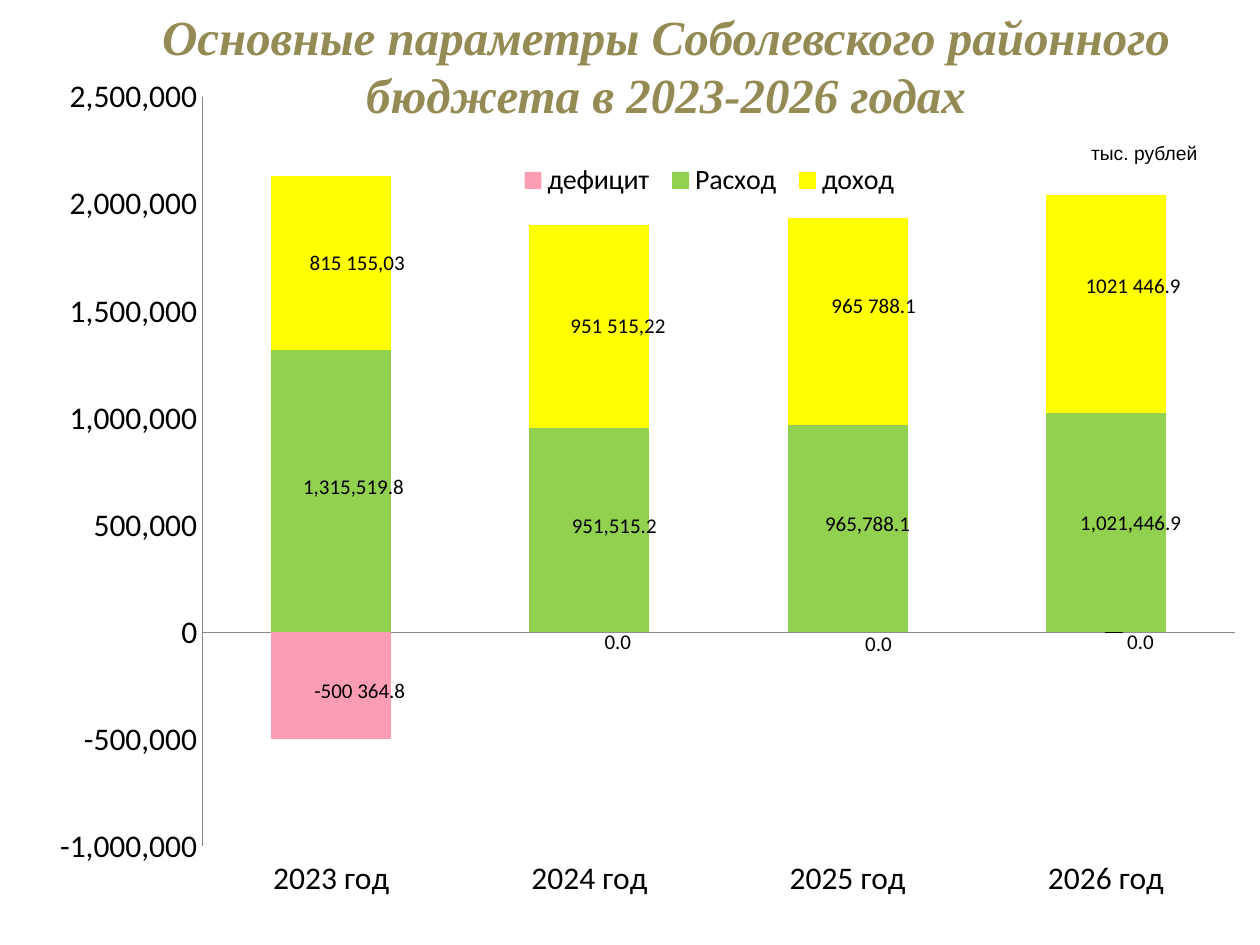
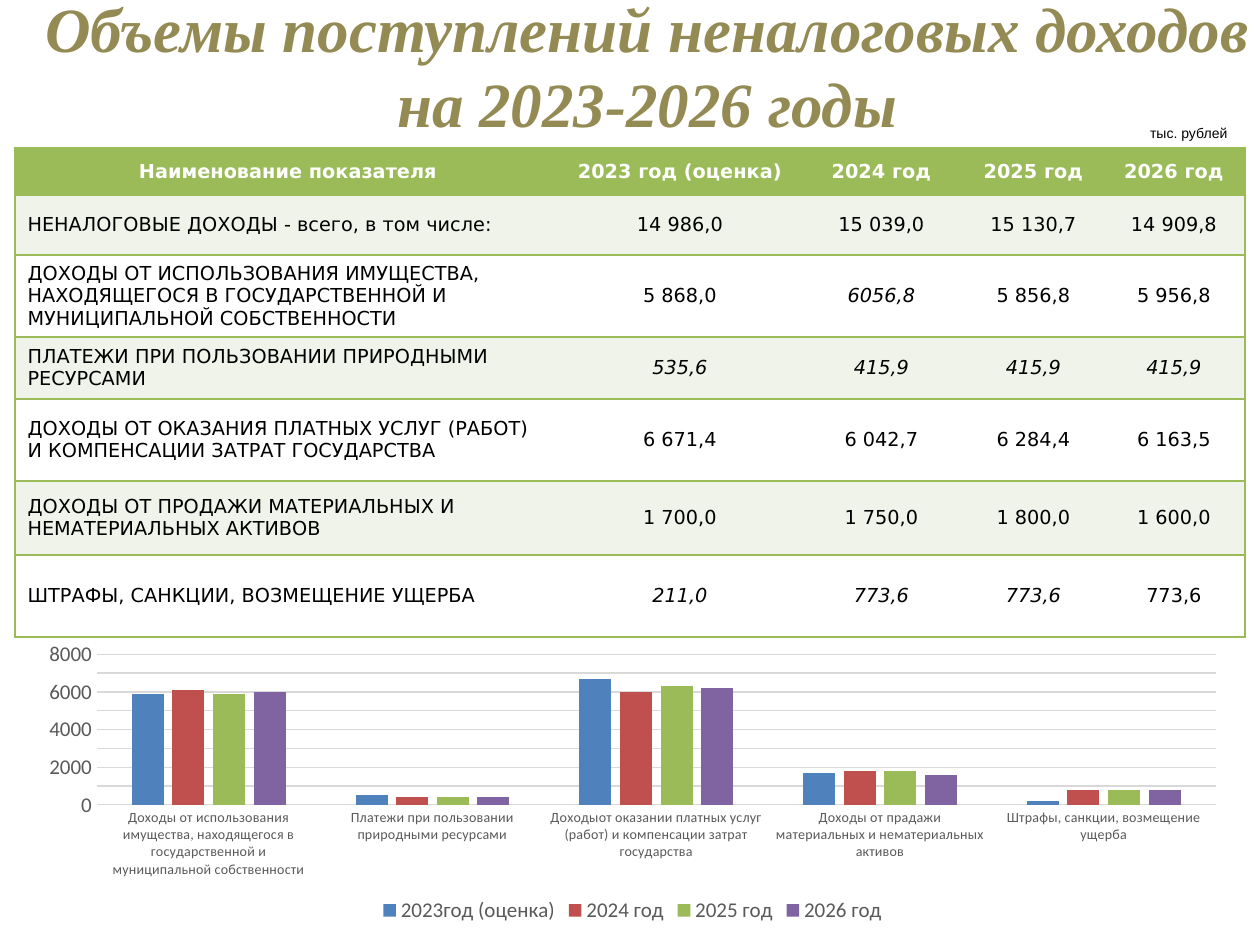
from copy import deepcopy
from dataclasses import dataclass

from lxml.etree import SubElement
from pptx import Presentation
from pptx.chart.data import CategoryChartData
from pptx.dml.color import RGBColor as RGB
from pptx.enum.chart import XL_CHART_TYPE as CT
from pptx.enum.chart import XL_LABEL_POSITION as LabelPos
from pptx.enum.chart import XL_LEGEND_POSITION as LegendPos
from pptx.enum.chart import XL_TICK_LABEL_POSITION as TickPos
from pptx.enum.chart import XL_TICK_MARK as Tick
from pptx.enum.text import MSO_ANCHOR as Anchor
from pptx.enum.text import MSO_AUTO_SIZE as AutoSize
from pptx.enum.text import PP_ALIGN as Align
from pptx.oxml import parse_xml
from pptx.oxml.ns import nsdecls, qn
from pptx.util import Pt


@dataclass(frozen=True)
class Theme:
    title: str = "948A54"
    text: str = "000000"
    white: str = "FFFFFF"
    green: str = "9BBB59"
    band: str = "EFF3EA"
    grey: str = "595959"
    grid: str = "D9D9D9"
    axis: str = "868686"
    budget: tuple = ("FD9DB4", "92D050", "FFFF00")
    years: tuple = ("4F81BD", "C0504D", "9BBB59", "8064A2")
    title_font: str = "Times New Roman"
    note_font: str = "Arial"
    table_font: str = "DejaVu Sans"
    chart_font: str = "Calibri"
    table_size: int = 11
    label_size: int = 12
    axis_size: int = 18
    legend_size: int = 16
    small_axis_size: int = 12
    category_size: int = 8


T = Theme()
TITLE_INDENT = 98

BUDGET_CHART = (15, 66, 1240, 880)
BUDGET_YEARS = ("2023 год", "2024 год", "2025 год", "2026 год")
BUDGET = (
    ("дефицит", (-500364.8, 0, 0, 0), r"#\ ##0.0", {},
     ((28, 5), (26, 10), (29, 12), (32, 10))),
    ("Расход", (1315519.8, 951515.2, 965788.1, 1021446.9), "#,##0.0", {},
     ((22, -4), (25, -4), (20, -4), (25, 0))),
    ("доход", (815155, 951515.2, 965788.1, 1021446.9), r"#\ ##0.0",
     {0: "815 155,03", 1: "951 515,22"},
     ((26, 0), (29, 0), (26, -16), (27, -18))),
)

COLUMNS = (546, 238, 165, 139, 142)
HEADER = ("Наименование показателя", "2023 год (оценка)",
          "2024 год", "2025 год", "2026 год")
ROWS = (
    (47, HEADER, ()),
    (60, ("НЕНАЛОГОВЫЕ ДОХОДЫ - всего, в том числе:",
          "14 986,0", "15 039,0", "15 130,7", "14 909,8"), ()),
    (82, ("ДОХОДЫ ОТ ИСПОЛЬЗОВАНИЯ ИМУЩЕСТВА, НАХОДЯЩЕГОСЯ В "
          "ГОСУДАРСТВЕННОЙ И МУНИЦИПАЛЬНОЙ СОБСТВЕННОСТИ",
          "5 868,0", "6056,8", "5 856,8", "5 956,8"), (2,)),
    (62, ("ПЛАТЕЖИ ПРИ ПОЛЬЗОВАНИИ ПРИРОДНЫМИ РЕСУРСАМИ",
          "535,6", "415,9", "415,9", "415,9"), (1, 2, 3, 4)),
    (82, ("ДОХОДЫ ОТ ОКАЗАНИЯ ПЛАТНЫХ УСЛУГ (РАБОТ) И КОМПЕНСАЦИИ "
          "ЗАТРАТ ГОСУДАРСТВА",
          "6 671,4", "6 042,7", "6 284,4", "6 163,5"), ()),
    (74, ("ДОХОДЫ ОТ ПРОДАЖИ МАТЕРИАЛЬНЫХ И НЕМАТЕРИАЛЬНЫХ АКТИВОВ",
          "1 700,0", "1 750,0", "1 800,0", "1 600,0"), ()),
    (82, ("ШТРАФЫ, САНКЦИИ, ВОЗМЕЩЕНИЕ УЩЕРБА",
          "211,0", "773,6", "773,6", "773,6"), (1, 2, 3)),
)

INCOME_KINDS = (
    "Доходы от использования имущества, находящегося в государственной "
    "и муниципальной собственности",
    "Платежи при пользовании природными ресурсами",
    "Доходыот оказании платных услуг (работ) и компенсации затрат государства",
    "Доходы от прадажи материальных и нематериальных активов",
    "Штрафы, санкции, возмещение ущерба",
)
INCOME = (
    ("2023год (оценка)", (5900, 500, 6700, 1700, 200)),
    ("2024 год", (6100, 400, 6000, 1800, 800)),
    ("2025 год", (5900, 400, 6300, 1800, 800)),
    ("2026 год", (6000, 400, 6200, 1600, 800)),
)


def px(n):
    return round(n * 914400 / 126)


def style(font, size, name, color, bold=False, italic=False):
    font.size, font.name = Pt(size), name
    font.bold, font.italic = bold, italic
    font.color.rgb = RGB.from_string(color)


def add_title(s, box, text, size):
    tf = s.shapes.add_textbox(*map(px, box)).text_frame
    tf.word_wrap = True
    tf.vertical_anchor = Anchor.MIDDLE
    p = tf.paragraphs[0]
    p.text = text
    p.alignment = Align.CENTER
    pPr = p._p.get_or_add_pPr()
    pPr.set("marL", str(px(TITLE_INDENT)))
    pPr.set("indent", "0")
    style(p.runs[0].font, size, T.title_font, T.title, True, True)


def add_unit_note(s, box, size):
    tf = s.shapes.add_textbox(*map(px, box)).text_frame
    tf.word_wrap = False
    tf.auto_size = AutoSize.SHAPE_TO_FIT_TEXT
    p = tf.paragraphs[0]
    p.text = "тыс. рублей"
    p.alignment = Align.RIGHT
    style(p.runs[0].font, size, T.note_font, T.text)


def set_borders(cell, shown):
    tcPr = cell._tc.get_or_add_tcPr()
    for side in "LRTB":
        ln = SubElement(tcPr, qn(f"a:ln{side}"), w=str(Pt(1)))
        if side in shown:
            fill = SubElement(ln, qn("a:solidFill"))
            SubElement(fill, qn("a:srgbClr"), val=T.green)
        else:
            SubElement(ln, qn("a:noFill"))


def fill_cell(cell, row, col, text, italic):
    head = row == 0
    last = len(COLUMNS) - 1
    set_borders(cell, "TB" + {0: "L", last: "R"}.get(col, ""))
    color = T.green if head else T.band if row % 2 else T.white
    cell.fill.solid()
    cell.fill.fore_color.rgb = RGB.from_string(color)
    cell.vertical_anchor = Anchor.MIDDLE
    p = cell.text_frame.paragraphs[0]
    p.text = text
    p.alignment = Align.CENTER if head or col else Align.LEFT
    style(p.runs[0].font, T.table_size, T.table_font,
          T.white if head else T.text, head, italic)


def add_income_table(s):
    box = (15, 148, sum(COLUMNS), sum(row[0] for row in ROWS))
    table = s.shapes.add_table(len(ROWS), len(COLUMNS), *map(px, box)).table
    table.first_row = table.horz_banding = False
    for column, width in zip(table.columns, COLUMNS):
        column.width = px(width)
    for i, (height, texts, italics) in enumerate(ROWS):
        table.rows[i].height = px(height)
        for j, text in enumerate(texts):
            fill_cell(table.cell(i, j), i, j, text, j in italics)


def line_color(line, color, width=0.75):
    line.color.rgb = RGB.from_string(color)
    line.width = Pt(width)


def add_column_chart(s, kind, box, cats, series, colors, gap, overlap):
    data = CategoryChartData()
    data.categories = cats
    for name, values in series:
        data.add_series(name, values)
    chart = s.shapes.add_chart(kind, *map(px, box), data).chart
    chart.has_title = False
    chart.font.name = T.chart_font
    plot = chart.plots[0]
    plot.vary_by_categories = False
    plot.gap_width, plot.overlap = gap, overlap
    for ser, color in zip(plot.series, colors):
        ser.invert_if_negative = False
        ser.format.fill.solid()
        ser.format.fill.fore_color.rgb = RGB.from_string(color)
    for axis in (chart.category_axis, chart.value_axis):
        axis.major_tick_mark = axis.minor_tick_mark = Tick.NONE
    chart.has_legend = True
    chart.legend.position = LegendPos.BOTTOM
    chart.legend.include_in_layout = False
    return chart


def layout_xml(**values):
    items = "".join(f'<c:{k} val="{v}"/>' for k, v in values.items())
    return parse_xml(f'<c:layout {nsdecls("c")}><c:manualLayout>{items}'
                     "</c:manualLayout></c:layout>")


def place_part(chart, tag, after, **values):
    part = chart.element.xpath(f".//c:{tag}")[0]
    for old in part.findall(qn("c:layout")):
        part.remove(old)
    part.insert(after, layout_xml(**values))


def add_point_labels(ser, fmt, custom, offsets):
    labels = ser.data_labels
    labels.show_value = True
    labels.number_format, labels.number_format_is_linked = fmt, False
    style(labels.font, T.label_size, T.chart_font, T.text)
    for i, (dx, dy) in enumerate(offsets):
        label = ser.points[i].data_label
        if i in custom:
            p = label.text_frame.paragraphs[0]
            p.text = custom[i]
            font = p.runs[0].font
        else:
            font = label.font
        style(font, T.label_size, T.chart_font, T.text)
        label.position = LabelPos.CENTER
        dLbl = ser._element.xpath(f"c:dLbls/c:dLbl[c:idx/@val='{i}']")[0]
        dLbl.find(qn("c:idx")).addnext(
            layout_xml(x=round(dx / BUDGET_CHART[2], 3),
                       y=round(dy / BUDGET_CHART[3], 3)))
        if i not in custom:
            num = parse_xml(f'<c:numFmt {nsdecls("c")} sourceLinked="0"/>')
            num.set("formatCode", fmt)
            dLbl.find(qn("c:txPr")).addprevious(num)


def add_budget_chart(s):
    chart = add_column_chart(s, CT.COLUMN_STACKED, BUDGET_CHART, BUDGET_YEARS,
                             [row[:2] for row in BUDGET], T.budget, 115, 100)
    style(chart.font, T.axis_size, T.chart_font, T.text)
    style(chart.legend.font, T.legend_size, T.chart_font, T.text)
    cat, val = chart.category_axis, chart.value_axis
    cat.tick_label_position = TickPos.LOW
    val.has_major_gridlines = False
    val.minimum_scale, val.maximum_scale = -1000000, 2500000
    val.major_unit = 500000
    val.tick_labels.number_format = "#,##0"
    val.tick_labels.number_format_is_linked = False
    for axis in (cat, val):
        line_color(axis.format.line, T.axis)
    place_part(chart, "plotArea", 0, layoutTarget="inner", xMode="edge",
               yMode="edge", x=0.151, y=0.035, w=0.833, h=0.852)
    place_part(chart, "legend", 1, xMode="edge", yMode="edge",
               x=0.4, y=0.1, w=0.32, h=0.06)
    for ser, (_, _, fmt, custom, offsets) in zip(chart.plots[0].series, BUDGET):
        add_point_labels(ser, fmt, custom, offsets)


def add_income_chart(s):
    chart = add_column_chart(s, CT.COLUMN_CLUSTERED, (25, 636, 1215, 292),
                             INCOME_KINDS, INCOME, T.years, 219, -27)
    cat, val = chart.category_axis, chart.value_axis
    style(cat.tick_labels.font, T.category_size, T.chart_font, T.grey)
    for part in (val.tick_labels, chart.legend):
        style(part.font, T.small_axis_size, T.chart_font, T.grey)
    val.minimum_scale, val.maximum_scale = 0, 8000
    val.major_unit, val.minor_unit = 2000, 1000
    val.has_major_gridlines = val.has_minor_gridlines = True
    val.format.line.fill.background()
    line_color(cat.format.line, T.grid)
    line_color(val.major_gridlines.format.line, T.grid)
    major, minor = (chart.element.xpath(f".//c:valAx/c:{tag}")[0]
                    for tag in ("majorGridlines", "minorGridlines"))
    minor.append(deepcopy(major.find(qn("c:spPr"))))


def main():
    prs = Presentation()
    prs.slide_width, prs.slide_height = px(1260), px(945)
    blank = prs.slide_layouts[6]

    s = prs.slides.add_slide(blank)
    add_budget_chart(s)
    add_unit_note(s, (1076, 135, 134, 37), 11)
    add_title(s, (25, 26, 1184, 78),
              "Основные параметры Соболевского районного бюджета "
              "в 2023-2026 годах", 28)

    s = prs.slides.add_slide(blank)
    add_income_table(s)
    add_unit_note(s, (1135, 118, 105, 30), 8)
    add_title(s, (-74, 26, 1344, 78),
              "Объемы поступлений неналоговых доходов на 2023-2026 годы", 36)
    add_income_chart(s)

    prs.save("out.pptx")


if __name__ == "__main__":
    main()
